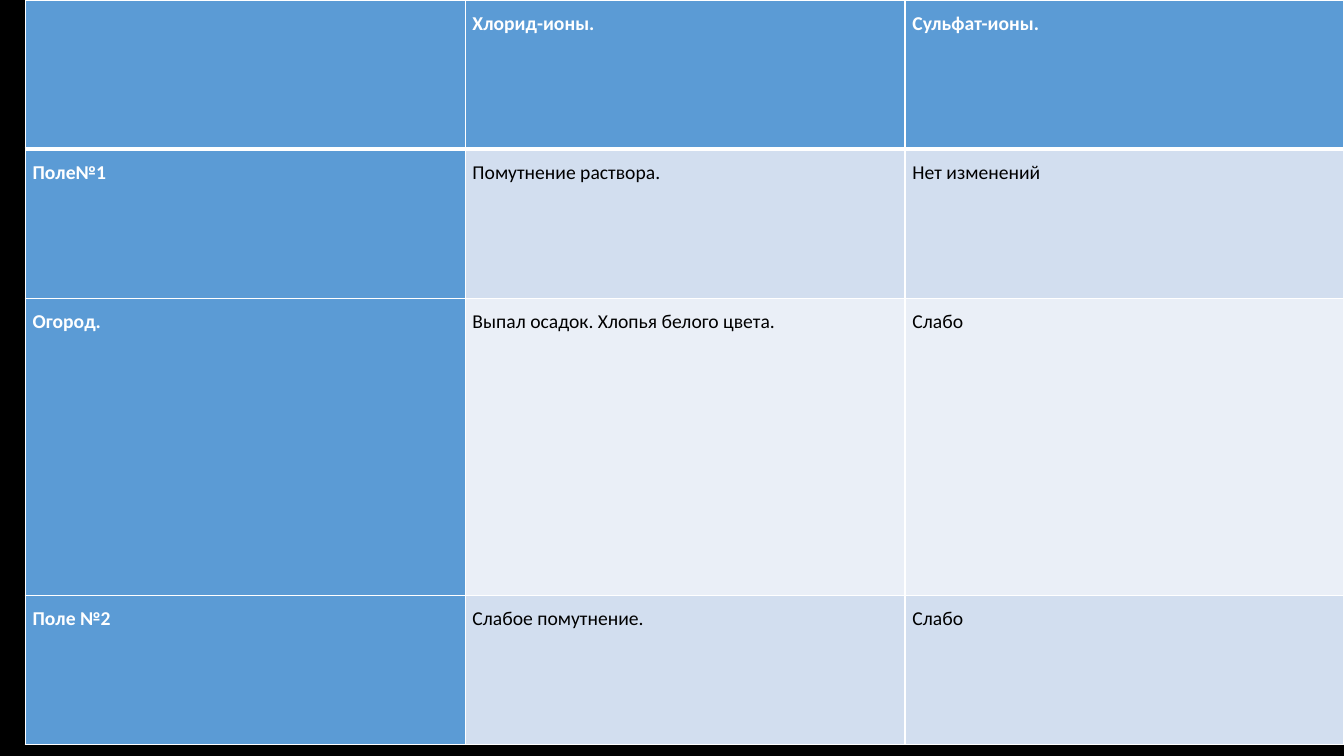
from lxml import etree
from pptx import Presentation
from pptx.dml.color import RGBColor
from pptx.enum.text import PP_ALIGN
from pptx.oxml.ns import qn
from pptx.util import Pt

PX = 9525
JUST = PP_ALIGN.JUSTIFY
WHITE, BLACK, BLUE = "FFFFFF", "000000", "5B9BD5"
BANDS = ["D2DEEF", "EAEFF7"]


def paint(fill, color):
    fill.solid()
    fill.fore_color.rgb = RGBColor.from_string(color)


def write(cell, text, color=BLACK, bold=False, size=14, font="Calibri"):
    par = cell.text_frame.paragraphs[0]
    par.alignment = JUST
    par.line_spacing = 1.5
    par.font.size = Pt(size)
    if text:
        run = par.add_run()
        run.text = text
        run.font.name = font
        run.font.size = Pt(size)
        run.font.bold = bold
        paint(run.font.fill, color)


prs = Presentation()
prs.slide_width = 1280 * PX
prs.slide_height = 720 * PX
slide = prs.slides.add_slide(prs.slide_layouts[6])
paint(slide.background.fill, BLACK)

rows = [
    ["", "Хлорид-ионы.", "Сульфат-ионы."],
    ["Поле№1", "Помутнение раствора.", "Нет изменений"],
    ["Огород.", "Выпал осадок. Хлопья белого цвета.", "Слабо"],
    ["Поле №2", "Слабое помутнение.", "Слабо"],
]
wide = [419, 419, 418]
high = [142, 142, 283, 142]

table = slide.shapes.add_table(
    len(rows), len(wide), 24 * PX, 0, sum(wide) * PX, sum(high) * PX
).table
for col, width in zip(table.columns, wide):
    col.width = width * PX
for row, height in zip(table.rows, high):
    row.height = height * PX

for r, texts in enumerate(rows):
    for c, text in enumerate(texts):
        cell = table.cell(r, c)
        cell.margin_left = cell.margin_right = 7 * PX
        cell.margin_top = cell.margin_bottom = 0
        head = r == 0 or c == 0
        write(cell, text, color=WHITE if head else BLACK, bold=head)
        props = cell._tc.get_or_add_tcPr()
        for side in "LRTB":
            thick = (r, side) in [(0, "B"), (1, "T")]
            line = etree.SubElement(
                props, qn("a:ln" + side), w=str(Pt(3 if thick else 1))
            )
            solid = etree.SubElement(line, qn("a:solidFill"))
            etree.SubElement(solid, qn("a:srgbClr"), val=WHITE)
        paint(cell.fill, BLUE if head else BANDS[(r - 1) % 2])

prs.save("out.pptx")
